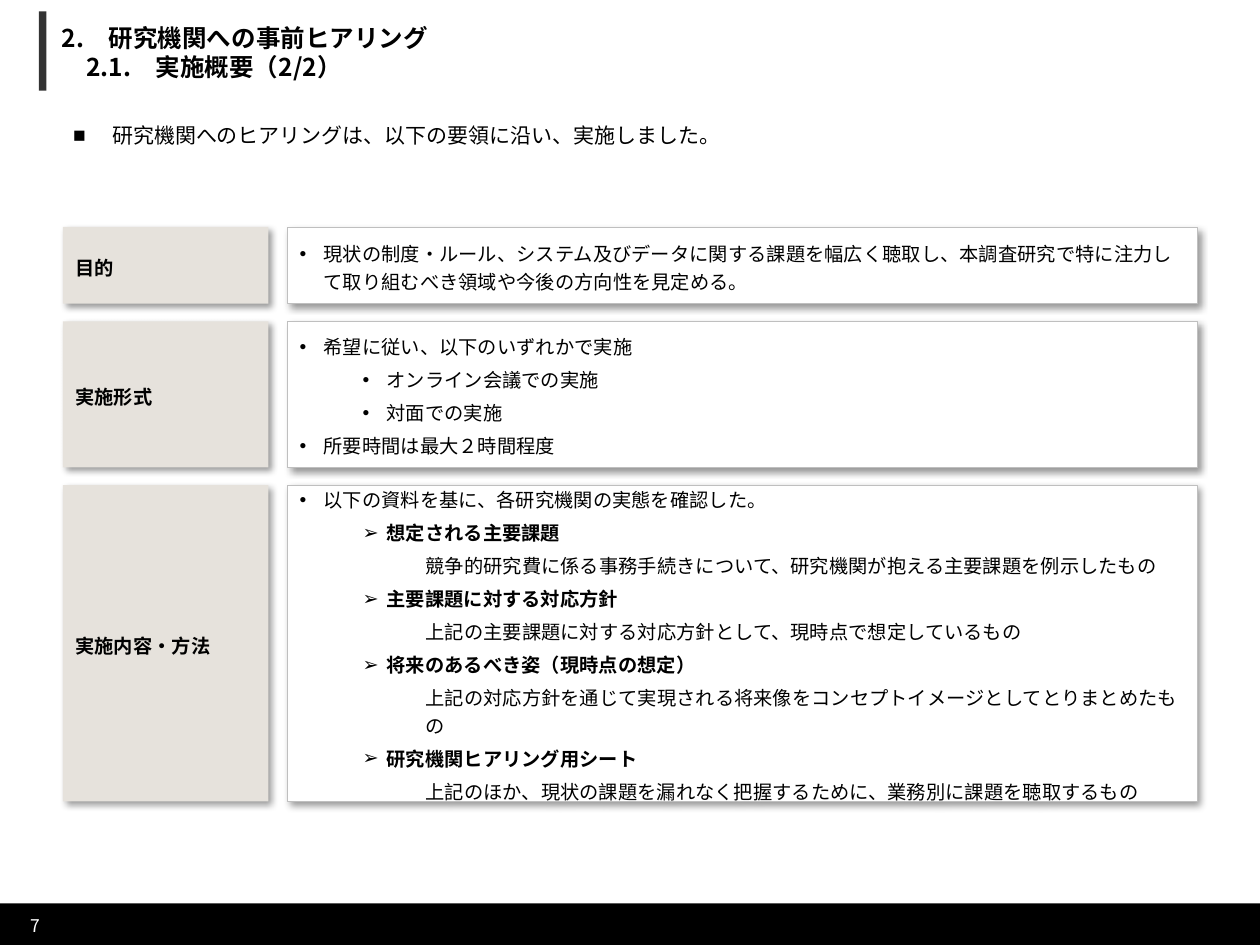
from dataclasses import dataclass

from lxml.etree import SubElement
from pptx import Presentation
from pptx.dml.color import RGBColor
from pptx.enum.shapes import MSO_SHAPE as Preset
from pptx.enum.text import MSO_ANCHOR as Anchor, MSO_AUTO_SIZE as AutoSize
from pptx.oxml.ns import qn
from pptx.util import Inches, Pt

COLORS = {
    "text": "000000",
    "footer": "000000",
    "accent": "333333",
    "label": "E6E2DC",
    "panel": "FFFFFF",
    "border": "BFBFBF",
    "shadow": "000000",
    "page": "FFFFFF",
}
NOTO = "Noto Sans CJK JP"
LATO = "Lato"
LABEL_LEFT, LABEL_WIDTH = 0.5, 1.63
PANEL_LEFT, PANEL_WIDTH = 2.28, 7.22
FIRST_TOP, ROW_GAP = 1.8, 0.14


@dataclass(frozen=True)
class Style:
    level: int
    margin: float
    hanging: float
    bullet: str = ""
    bold: bool = False


@dataclass(frozen=True)
class Item:
    text: str
    style: Style


@dataclass(frozen=True)
class Row:
    label: str
    height: float
    font: str
    items: tuple[Item, ...]


LEAD = Style(0, 0.31, 0.31, "■")
POINT = Style(0, 0.19, 0.19, "•")
OPTION = Style(1, 0.69, 0.19, "•")
MATERIAL = Style(1, 0.69, 0.19, "➢", bold=True)
DETAIL = Style(2, 1, 0)
LABEL = Style(0, 0, 0, bold=True)

ROWS = (
    Row("目的", 0.61, LATO, (
        Item("現状の制度・ルール、システム及びデータに関する課題を幅広く聴取し、"
             "本調査研究で特に注力して取り組むべき領域や今後の方向性を見定める。", POINT),
    )),
    Row("実施形式", 1.16, NOTO, (
        Item("希望に従い、以下のいずれかで実施", POINT),
        Item("オンライン会議での実施", OPTION),
        Item("対面での実施", OPTION),
        Item("所要時間は最大２時間程度", POINT),
    )),
    Row("実施内容・方法", 2.51, LATO, (
        Item("以下の資料を基に、各研究機関の実態を確認した。", POINT),
        Item("想定される主要課題", MATERIAL),
        Item("競争的研究費に係る事務手続きについて、研究機関が抱える主要課題を例示したもの", DETAIL),
        Item("主要課題に対する対応方針", MATERIAL),
        Item("上記の主要課題に対する対応方針として、現時点で想定しているもの", DETAIL),
        Item("将来のあるべき姿（現時点の想定）", MATERIAL),
        Item("上記の対応方針を通じて実現される将来像をコンセプトイメージとしてとりまとめたもの", DETAIL),
        Item("研究機関ヒアリング用シート", MATERIAL),
        Item("上記のほか、現状の課題を漏れなく把握するために、業務別に課題を聴取するもの", DETAIL),
    )),
)


def rgb(key: str) -> RGBColor:
    return RGBColor.from_string(COLORS[key])


def place(shape, left: float, top: float, width: float, height: float) -> None:
    shape.left, shape.top = Inches(left), Inches(top)
    shape.width, shape.height = Inches(width), Inches(height)


def prepare_frame(frame, anchor: Anchor, inset: bool = True) -> None:
    frame.word_wrap = True
    frame.auto_size = AutoSize.NONE
    frame.vertical_anchor = anchor
    frame.margin_left = frame.margin_right = Inches(0.1 if inset else 0)
    frame.margin_top = frame.margin_bottom = Inches(0.05 if inset else 0)


def add_run(paragraph, text: str, font: str, size: float,
            color: str = "text", bold: bool = False) -> None:
    run = paragraph.add_run()
    run.text = text
    run.font.size = Pt(size)
    run.font.bold = bold
    run.font.color.rgb = rgb(color)
    run.font.name = font
    SubElement(run.font._element, qn("a:ea"), typeface=font)


def format_paragraph(paragraph, style: Style, spacing: float, before: float) -> None:
    properties = paragraph._p.get_or_add_pPr()
    properties.set("algn", "l")
    properties.set("marL", str(Inches(style.margin)))
    properties.set("indent", str(-Inches(style.hanging)))
    if style.bullet:
        SubElement(properties, qn("a:buFont"), typeface="Arial")
        SubElement(properties, qn("a:buChar"), char=style.bullet)
    else:
        SubElement(properties, qn("a:buNone"))
    paragraph.level = style.level
    paragraph.line_spacing = spacing
    paragraph.space_before = Pt(before)


def write_items(frame, items: tuple[Item, ...], font: str, size: float,
                spacing: float = 1.2) -> None:
    for index, item in enumerate(items):
        paragraph = frame.add_paragraph() if index else frame.paragraphs[0]
        format_paragraph(paragraph, item.style, spacing, 3 if index else 0)
        add_run(paragraph, item.text, font, size, bold=item.style.bold)


def add_block(slide, left: float, top: float, width: float, height: float, fill: str):
    block = slide.shapes.add_shape(
        Preset.RECTANGLE, Inches(left), Inches(top), Inches(width), Inches(height))
    block.fill.solid()
    block.fill.fore_color.rgb = rgb(fill)
    block.line.fill.background()
    block.shadow.inherit = False
    return block


def add_card(slide, left: float, top: float, width: float, height: float, fill: str):
    card = add_block(slide, left, top, width, height, fill)
    effects = card._element.spPr.find(qn("a:effectLst"))
    shadow = SubElement(effects, qn("a:outerShdw"), blurRad=str(Pt(4)), dist=str(Pt(3)),
                        dir=str(45 * 60000), algn="tl", rotWithShape="0")
    color = SubElement(shadow, qn("a:srgbClr"), val=COLORS["shadow"])
    SubElement(color, qn("a:alpha"), val="40000")
    prepare_frame(card.text_frame, Anchor.MIDDLE)
    return card


def add_row(slide, row: Row, top: float) -> None:
    label = add_card(slide, LABEL_LEFT, top, LABEL_WIDTH, row.height, "label")
    write_items(label.text_frame, (Item(row.label, LABEL),), LATO, 11)
    panel = add_card(slide, PANEL_LEFT, top, PANEL_WIDTH, row.height, "panel")
    panel.line.color.rgb = rgb("border")
    panel.line.width = Pt(0.25)
    write_items(panel.text_frame, row.items, row.font, 11)


def main() -> None:
    deck = Presentation()
    deck.slide_width, deck.slide_height = Inches(10), Inches(7.5)
    slide = deck.slides.add_slide(deck.slide_layouts[1])

    add_block(slide, 0, 7.17, 10, 0.33, "footer")
    add_block(slide, 0.31, 0.09, 0.06, 0.63, "accent")
    page = slide.shapes.add_textbox(Inches(0.24), Inches(7.26), Inches(0.5), Inches(0.25))
    prepare_frame(page.text_frame, Anchor.TOP, inset=False)
    add_run(page.text_frame.paragraphs[0], "7", NOTO, 10, "page")

    title = slide.shapes.title
    place(title, 0.49, 0.11, 9.02, 0.61)
    prepare_frame(title.text_frame, Anchor.MIDDLE, inset=False)
    heading = title.text_frame.paragraphs[0]
    format_paragraph(heading, LABEL, 1.0, 0)
    add_run(heading, "2.　研究機関への事前ヒアリング", NOTO, 14, bold=True)
    heading.add_line_break()
    add_run(heading, "　2.1.　実施概要（2/2）", NOTO, 14, bold=True)

    summary = slide.placeholders[1]
    place(summary, 0.48, 0.92, 9.03, 0.35)
    prepare_frame(summary.text_frame, Anchor.TOP)
    write_items(summary.text_frame,
                (Item("研究機関へのヒアリングは、以下の要領に沿い、実施しました。", LEAD),),
                NOTO, 12, spacing=1.0)

    top = FIRST_TOP
    for row in ROWS:
        add_row(slide, row, top)
        top += row.height + ROW_GAP

    deck.save("out.pptx")


if __name__ == "__main__":
    main()
